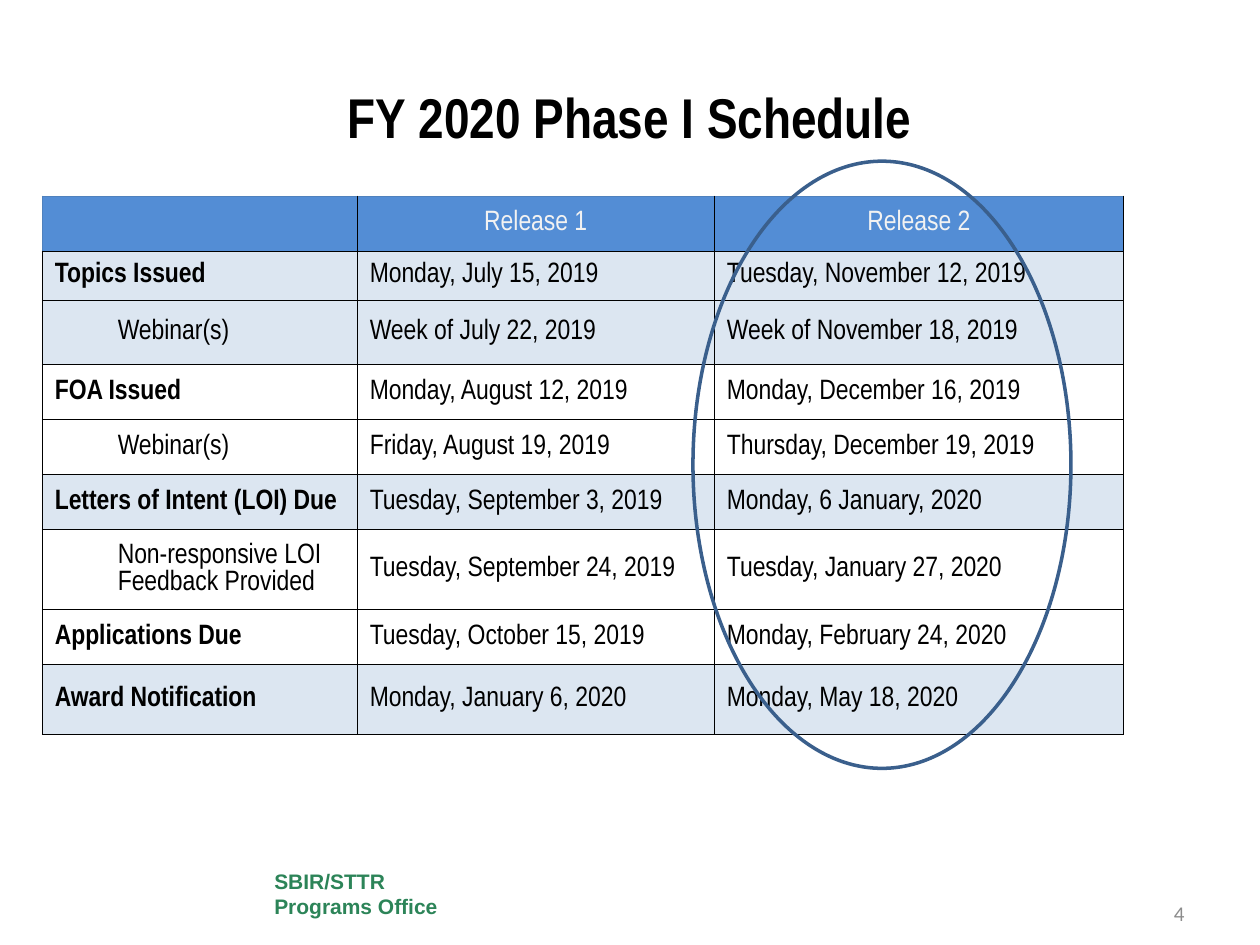
from lxml import etree
from pptx import Presentation
from pptx import util as u
from pptx.dml.color import RGBColor
from pptx.enum import shapes, text
from pptx.oxml import ns

BLACK, WHITE, HEADER_BLUE, PALE_BLUE = "000000", "FFFFFF", "538DD5", "DCE6F1"
HEADER_EDGE = "4F81BD"
COLUMN_WIDTHS = (6.35, 7.2, 8.25)
HEADER = ("", "Release 1", "Release 2")
SCHEDULE = (
    (0.99, PALE_BLUE, False, ("Topics Issued", "Monday, July 15, 2019", "Tuesday, November 12, 2019")),
    (1.3, PALE_BLUE, True, ("Webinar(s)", "Week of July 22, 2019", "Week of November 18, 2019")),
    (1.11, WHITE, False, ("FOA Issued", "Monday, August 12, 2019", "Monday, December 16, 2019")),
    (1.11, WHITE, True, ("Webinar(s)", "Friday, August 19, 2019", "Thursday, December 19, 2019")),
    (1.11, PALE_BLUE, False, ("Letters of Intent (LOI) Due", "Tuesday, September 3, 2019", "Monday, 6 January, 2020")),
    (1.31, WHITE, True, ("Non-responsive LOI Feedback Provided", "Tuesday, September 24, 2019", "Tuesday, January 27, 2020")),
    (1.11, WHITE, False, ("Applications Due", "Tuesday, October 15, 2019", "Monday, February 24, 2020")),
    (1.4, PALE_BLUE, False, ("Award Notification", "Monday, January 6, 2020", "Monday, May 18, 2020")),
)


def color(value):
    return RGBColor.from_string(value)


def box_cm(box):
    return [u.Cm(length) for length in box]


def write(frame, content, size=16, font="Arial Narrow", fill=BLACK, bold=False,
          align=text.PP_ALIGN.LEFT, indent=0):
    frame.word_wrap = True
    paragraph = frame.paragraphs[0]
    paragraph.alignment = align
    if indent:
        paragraph.level = 1
        properties = paragraph._p.get_or_add_pPr()
        properties.set("marL", str(u.Cm(indent)))
        properties.set("indent", "0")
    run = paragraph.add_run()
    run.text = content
    run.font.size = u.Pt(size)
    run.font.name = font
    run.font.bold = bold
    run.font.color.rgb = color(fill)


def set_borders(cell, **edges):
    properties = cell._tc.get_or_add_tcPr()
    for position, side in enumerate("LRTB"):
        line = etree.Element(ns.qn(f"a:ln{side}"), w=str(u.Pt(0.5)))
        solid = etree.SubElement(line, ns.qn("a:solidFill"))
        etree.SubElement(solid, ns.qn("a:srgbClr"), val=edges.get(side, BLACK))
        properties.insert(position, line)


def style_cell(cell, fill, **edges):
    cell.vertical_anchor = text.MSO_ANCHOR.MIDDLE
    cell.fill.solid()
    cell.fill.fore_color.rgb = color(fill)
    set_borders(cell, **edges)


def add_title(slide, box):
    frame = slide.shapes.add_textbox(*box_cm(box)).text_frame
    frame.vertical_anchor = text.MSO_ANCHOR.MIDDLE
    write(frame, "FY 2020 Phase I Schedule", size=32, bold=True, align=text.PP_ALIGN.CENTER)


def add_schedule(slide, left, top):
    heights = [1.11] + [row[0] for row in SCHEDULE]
    box = (left, top, sum(COLUMN_WIDTHS), sum(heights))
    table = slide.shapes.add_table(len(heights), len(COLUMN_WIDTHS), *box_cm(box)).table
    for column, width in zip(table.columns, COLUMN_WIDTHS):
        column.width = u.Cm(width)
    for row, height in zip(table.rows, heights):
        row.height = u.Cm(height)
    for index, label in enumerate(HEADER):
        cell = table.cell(0, index)
        edges = {"T": HEADER_EDGE} if index else {"T": HEADER_EDGE, "L": HEADER_EDGE}
        style_cell(cell, HEADER_BLUE, **edges)
        if label:
            write(cell.text_frame, label, fill="F2F2F2", align=text.PP_ALIGN.CENTER)
    for row_index, (_, fill, is_substep, labels) in enumerate(SCHEDULE, 1):
        for index, label in enumerate(labels):
            cell = table.cell(row_index, index)
            style_cell(cell, fill)
            is_step = index == 0
            write(cell.text_frame, label, bold=is_step and not is_substep,
                  indent=1.27 if is_step and is_substep else 0)


def add_highlight(slide, box):
    ellipse = slide.shapes.add_shape(shapes.MSO_SHAPE.FLOWCHART_CONNECTOR, *box_cm(box))
    ellipse.shadow.inherit = False
    ellipse.fill.background()
    ellipse.line.color.rgb = color("3A5F8C")
    ellipse.line.width = u.Pt(2)


def add_footer(slide, left, top):
    office = slide.shapes.add_shape(shapes.MSO_SHAPE.RECTANGLE, *box_cm((left, top, 4.01, 1.22)))
    office.shadow.inherit = False
    office.fill.solid()
    office.fill.fore_color.rgb = color(WHITE)
    office.line.fill.background()
    office.text_frame.vertical_anchor = text.MSO_ANCHOR.MIDDLE
    write(office.text_frame, "SBIR/STTR Programs Office", size=12, font="Arial",
          fill="2C8458", bold=True)
    number = slide.shapes.add_textbox(*box_cm((left + 12.93, top + 0.25, 5.92, 1.02))).text_frame
    number.vertical_anchor = text.MSO_ANCHOR.BOTTOM
    number.margin_bottom = 0
    write(number, "4", size=12, font="Calibri", fill="8C8C8C", align=text.PP_ALIGN.RIGHT)


def main():
    presentation = Presentation()
    presentation.slide_width, presentation.slide_height = u.Cm(25.4), u.Cm(19.05)
    slide = presentation.slides.add_slide(presentation.slide_layouts[6])
    add_footer(slide, 5.28, 17.4)
    add_title(slide, (1.27, 0.76, 22.86, 3.18))
    add_schedule(slide, 0.85, 3.95)
    add_highlight(slide, (13.97, 3.25, 7.62, 12.24))
    presentation.save("out.pptx")


if __name__ == "__main__":
    main()
